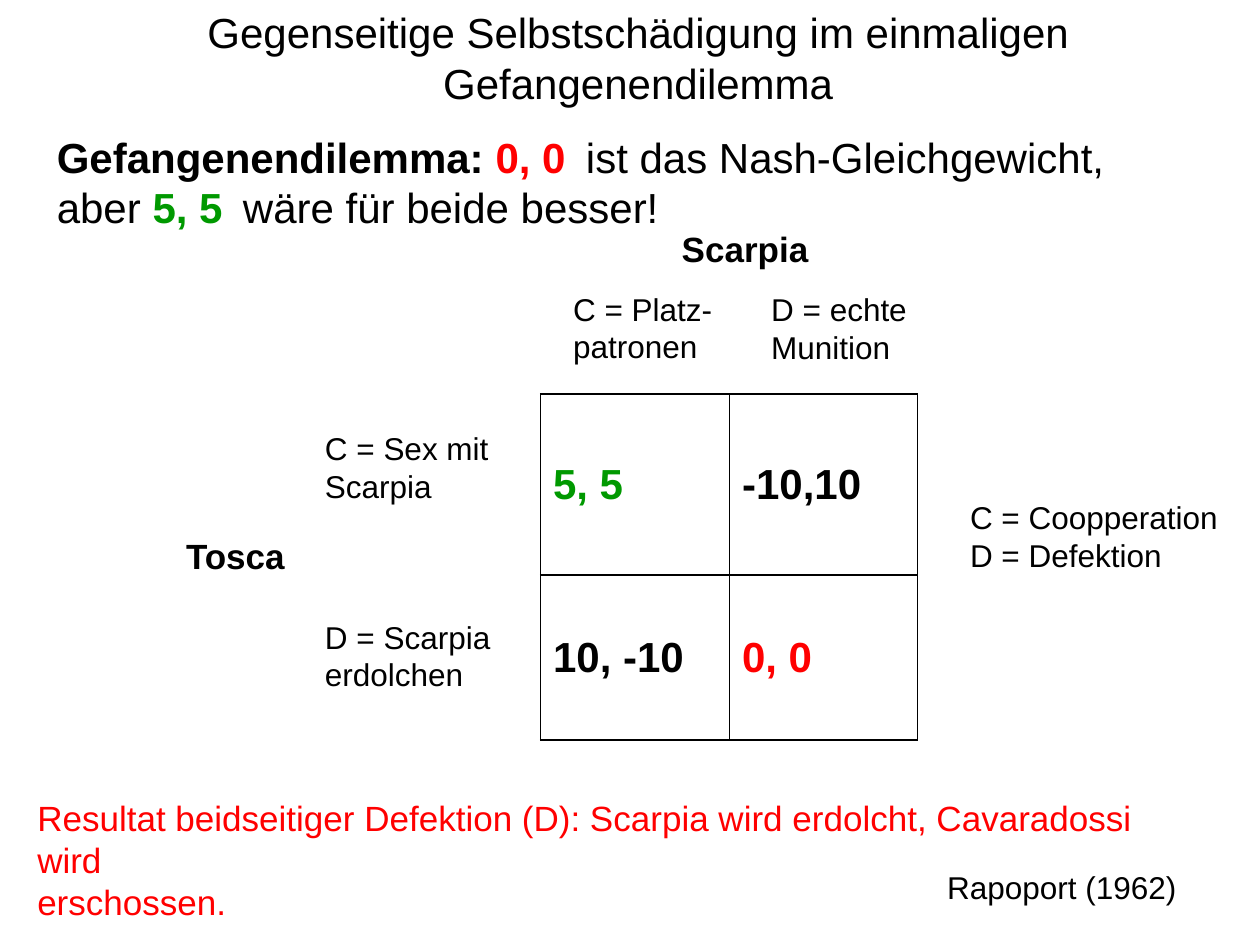
from lxml.etree import SubElement
from pptx import Presentation
from pptx.dml.color import RGBColor
from pptx.enum.text import MSO_ANCHOR, PP_ALIGN
from pptx.oxml.ns import qn
from pptx.util import Pt

COLORS = {"black": "000000", "red": "FF0000", "green": "009900"}
FONT = "Arial"
NO_STYLE = "{2D5ABB26-0587-4C30-8999-92F81FD0307C}"

# Character formats
TITLE = {"size": 24}
LABEL = {"size": 18}
PLAYER = {"size": 20, "bold": True}
RESULT = {"size": 20, "color": "red"}
BOLD = {"size": 24, "bold": True}
RED = {"size": 24, "bold": True, "color": "red"}
GREEN = {"size": 24, "bold": True, "color": "green"}

# Wrapped text: left, top, width, height, paragraphs of (text, format) runs, frame
BODY = [
    (93.6, 16.2, 542.2, 33.1,
     [[("Gegenseitige Selbstschädigung im einmaligen Gefangenendilemma", TITLE)]],
     {"vertical_anchor": MSO_ANCHOR.MIDDLE}, PP_ALIGN.CENTER),
    (14.2, 451.4, 660, 80,
     [[("Resultat beidseitiger Defektion (D): Scarpia wird erdolcht, Cavaradossi wird", RESULT)],
      [("erschossen.", RESULT)]], {}, PP_ALIGN.LEFT),
    (25.4, 71.6, 640.8, 93.6,
     [[("Gefangenendilemma: ", BOLD), ("0, 0", RED), (" ", LABEL),
       (" ist das Nash-Gleichgewicht, aber ", TITLE), ("5, 5", GREEN),
       (" ", LABEL), (" wäre für beide besser!", TITLE)]], {}, PP_ALIGN.LEFT),
]

# Labels on fixed lines: left, top, width, height, lines, format
LABELS = [
    (99.2, 301.7, 74, 31, ["Tosca"], PLAYER),
    (382.5, 126.4, 92, 31, ["Scarpia"], PLAYER),
    (178.6, 241.9, 113, 50.4, ["C = Sex mit", "Scarpia"], LABEL),
    (178.6, 349.4, 112, 50.4, ["D = Scarpia", "erdolchen"], LABEL),
    (320.4, 162, 97, 50.4, ["C = Platz-", "patronen"], LABEL),
    (433.6, 162.2, 95, 50.4, ["D = echte", "Munition"], LABEL),
    (534.2, 492.5, 149, 28.8, ["Rapoport (1962)"], LABEL),
    (547.2, 281.3, 159, 50.4, ["C = Coopperation", "D = Defektion"], LABEL),
]

# Payoff matrix, inside a larger borderless grid
TABLE_LEFT, TABLE_TOP = 121.7, 156.6
COLUMNS = [168.5, 18.7, 108, 107.3, 99.4]
ROWS = [68.4, 103.7, 94.3]
FIRST_ROW, FIRST_COLUMN = 1, 2
PAYOFFS = [
    [("5, 5", GREEN), ("-10,10", BOLD)],
    [("10, -10", BOLD), ("0, 0", RED)],
]


def set_all(target, values):
    for name, value in values.items():
        setattr(target, name, value)


def add_run(paragraph, text, style):
    run = paragraph.add_run()
    run.text = text
    set_all(run.font, {"name": FONT, "size": Pt(style["size"]),
                       "bold": style.get("bold", False)})
    run.font.color.rgb = RGBColor.from_string(COLORS[style.get("color", "black")])


def add_text(slide, box, paragraphs, frame_values, alignment=PP_ALIGN.LEFT):
    frame = slide.shapes.add_textbox(*map(Pt, box)).text_frame
    set_all(frame, frame_values)
    for index, runs in enumerate(paragraphs):
        paragraph = frame.add_paragraph() if index else frame.paragraphs[0]
        paragraph.alignment = alignment
        for text, style in runs:
            add_run(paragraph, text, style)


def add_borders(cell):
    properties = cell._tc.get_or_add_tcPr()
    for index, side in enumerate(("lnL", "lnR", "lnT", "lnB")):
        line = properties.makeelement(qn(f"a:{side}"), {"w": str(Pt(1))})
        fill = SubElement(line, qn("a:solidFill"))
        SubElement(fill, qn("a:srgbClr"), val=COLORS["black"])
        properties.insert(index, line)


def add_payoff_table(slide):
    shape = slide.shapes.add_table(
        len(ROWS), len(COLUMNS), Pt(TABLE_LEFT), Pt(TABLE_TOP),
        Pt(sum(COLUMNS)), Pt(sum(ROWS)))
    table = shape.table
    set_all(table, {"first_row": False, "horz_banding": False})
    table._tbl.tblPr.find(qn("a:tableStyleId")).text = NO_STYLE
    for column, width in zip(table.columns, COLUMNS):
        column.width = Pt(width)
    for row, height in zip(table.rows, ROWS):
        row.height = Pt(height)
    for cell in table.iter_cells():
        cell.fill.background()

    last = len(COLUMNS) - 1
    table.cell(FIRST_ROW, last).merge(table.cell(len(ROWS) - 1, last))

    for row, payoffs in enumerate(PAYOFFS, FIRST_ROW):
        for column, (text, style) in enumerate(payoffs, FIRST_COLUMN):
            cell = table.cell(row, column)
            cell.vertical_anchor = MSO_ANCHOR.MIDDLE
            paragraph = cell.text_frame.paragraphs[0]
            paragraph.space_before = Pt(4.8)
            add_run(paragraph, text, style)
            add_borders(cell)


def main():
    presentation = Presentation()
    set_all(presentation, {"slide_width": Pt(720), "slide_height": Pt(540)})
    slide = presentation.slides.add_slide(presentation.slide_layouts[6])

    # Title, result and explanation
    for *box, paragraphs, frame_values, alignment in BODY:
        add_text(slide, box, paragraphs, {"word_wrap": True, **frame_values}, alignment)

    # Payoff matrix with its players and strategies
    add_payoff_table(slide)
    for *box, lines, style in LABELS:
        add_text(slide, box, [[(line, style)] for line in lines], {"word_wrap": False})

    presentation.save("out.pptx")


if __name__ == "__main__":
    main()
